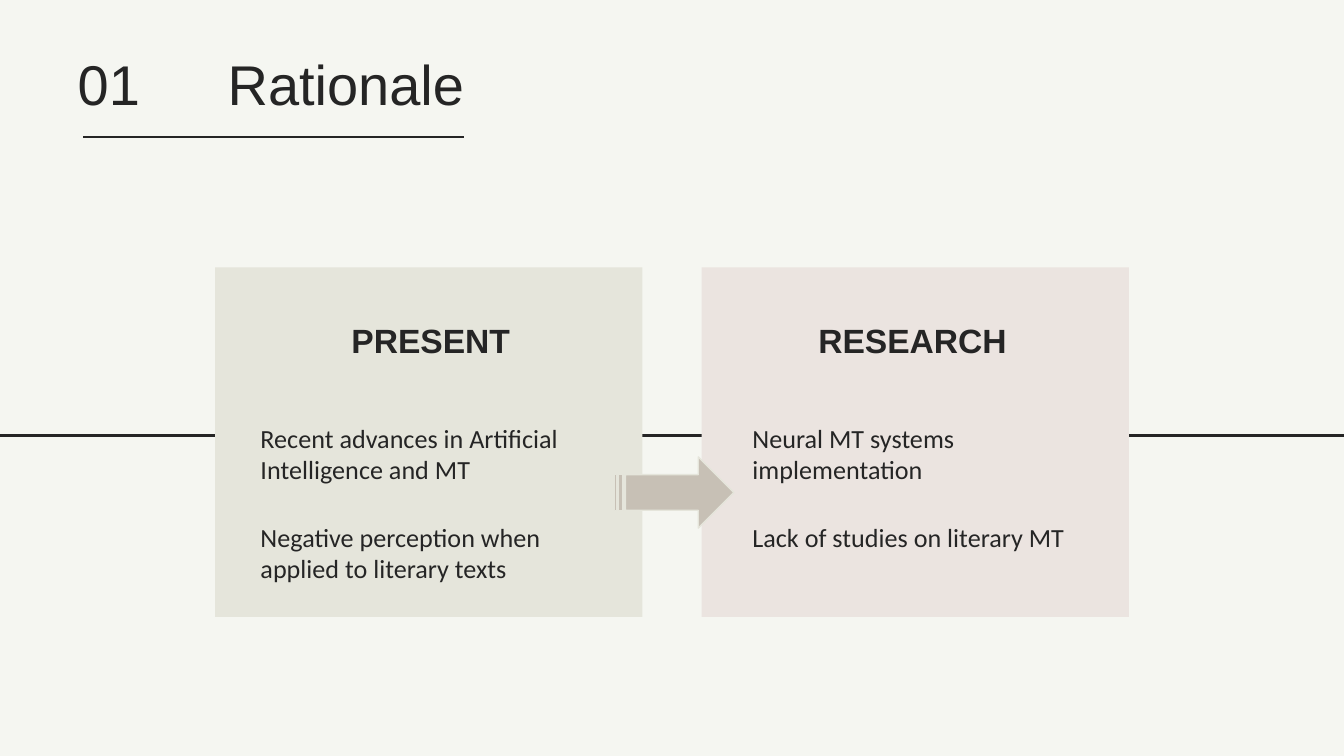
from pptx import Presentation
from pptx.dml.color import RGBColor as Rgb
from pptx.enum.shapes import MSO_CONNECTOR as Conn, MSO_SHAPE as Kind
from pptx.enum.text import MSO_ANCHOR as Anchor, PP_ALIGN as Align
from pptx.oxml.ns import qn
from pptx.util import Inches, Pt
from lxml.etree import SubElement

HUES = {"back": "F5F6F1", "ink": "252525", "sage": "E5E5DB",
        "rose": "EBE4E0", "sand": "C7C0B5"}


def hue(name):
    return Rgb.from_string(HUES[name])


class Deck:
    """Holds the style and the current slide."""
    head, body, pad = "Arial", "Calibri", 0.1

    def __init__(self, wide, high):
        self.prs = Presentation()
        self.prs.slide_width, self.prs.slide_height = Inches(wide), Inches(high)
        self.slide = self.prs.slides.add_slide(self.prs.slide_layouts[6])
        fill = self.slide.background.fill
        fill.solid()
        fill.fore_color.rgb = hue("back")

    def line(self, left, right, top):
        rule = self.slide.shapes.add_connector(
            Conn.STRAIGHT, Inches(left), Inches(top), Inches(right), Inches(top))
        rule.line.color.rgb = hue("ink")
        rule.line.width = Pt(1.5)
        SubElement(rule._element.spPr, qn("a:effectLst"))

    def shape(self, kind, box, fill, edge=None):
        form = self.slide.shapes.add_shape(kind, *map(Inches, box))
        form.shadow.inherit = False
        form.fill.solid()
        form.fill.fore_color.rgb = hue(fill)
        if edge:
            form.line.color.rgb = hue(edge)
            form.line.width = Pt(0.75)
        else:
            form.line.fill.background()

    def text(self, words, box, size=14, font=None, bold=False,
             align=Align.LEFT, anchor=Anchor.TOP, tab=None):
        """Adds a text box; tab is the place of a tab stop in inches."""
        frame = self.slide.shapes.add_textbox(*map(Inches, box)).text_frame
        frame.word_wrap = True
        frame.vertical_anchor = anchor
        frame.margin_left = frame.margin_right = Inches(self.pad)
        frame.margin_top = frame.margin_bottom = Inches(self.pad)
        para = frame.paragraphs[0]
        para.alignment = align
        if tab:
            stops = SubElement(para._p.get_or_add_pPr(), qn("a:tabLst"))
            SubElement(stops, qn("a:tab"), pos=str(Inches(tab)), algn="l")
        run = para.add_run()
        run.text = words
        run.font.name = font or self.body
        run.font.size = Pt(size)
        run.font.bold = bold
        run.font.color.rgb = hue("ink")

    def card(self, left, fill, title, title_box, notes, note_left, note_wide):
        self.shape(Kind.RECTANGLE, (left, 1.99, 3.18, 2.6), fill)
        start, wide = title_box
        self.text(title, (start, 2.36, wide, 0.34), size=18, font=self.head,
                  bold=True, align=Align.CENTER, anchor=Anchor.MIDDLE)
        for row, note in enumerate(notes):
            self.text(note, (note_left, 3.04 + row * 0.74, note_wide, 0.67))


def main():
    deck = Deck(10, 10 * 9 / 16)
    deck.line(0, 10, 3.24)
    deck.text("01\t Rationale", (0.48, 0.27, 3.09, 0.58), size=30,
              font=deck.head, tab=1)
    deck.line(0.62, 3.45, 1.02)
    deck.card(1.6, "sage", "PRESENT", (2.04, 2.33),
              ["Recent advances in Artificial Intelligence and MT",
               "Negative perception when applied to literary texts"], 1.84, 2.7)
    deck.card(5.22, "rose", "RESEARCH", (5.6, 2.38),
              ["Neural MT systems implementation",
               "Lack of studies on literary MT"], 5.5, 2.79)
    deck.shape(Kind.STRIPED_RIGHT_ARROW, (4.57, 3.4, 0.89, 0.53), "sand", "sage")
    deck.prs.save("out.pptx")


if __name__ == "__main__":
    main()
